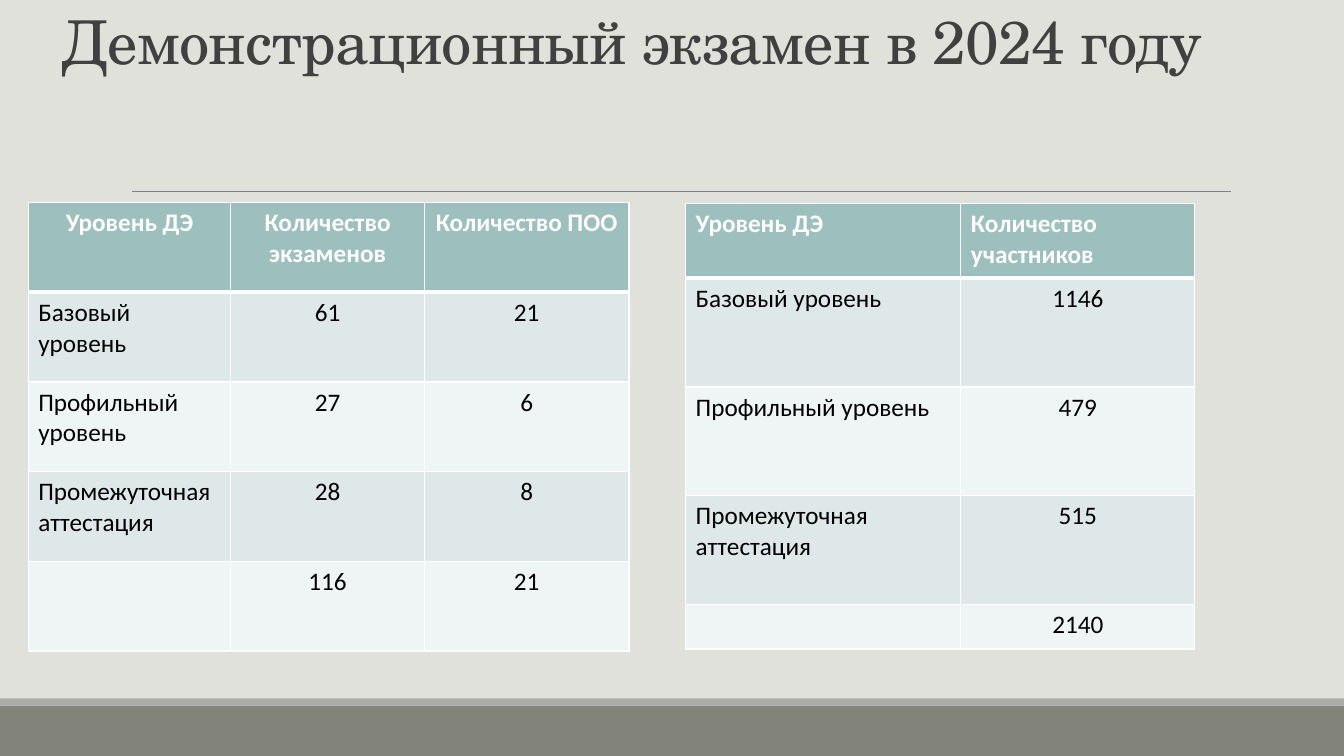
"""Builds the slide on the 2024 demonstration exam with its two result tables."""
from dataclasses import dataclass

from lxml import etree
from pptx import Presentation
from pptx.dml.color import RGBColor
from pptx.enum import shapes, text
from pptx.oxml import ns
from pptx.util import Inches, Pt

HEADER_FILL, BAND_FILLS = "9DBFBE", ("DFE8E8", "EFF4F4")
LEFT, CENTER = text.PP_ALIGN.LEFT, text.PP_ALIGN.CENTER


@dataclass
class Band:
    top: float
    height: float
    color: str


@dataclass
class ResultTable:
    left: float
    top: float
    widths: list[float]
    heights: list[float]
    header_align: text.PP_ALIGN
    rows: list[list[str]]


BANDS = [Band(7, 0.5, "82847C"), Band(6.93, 0.07, "ACADA8")]
TABLES = [
    ResultTable(0.28, 2.01, [2.01, 1.92, 2.03], [0.89] * 5, CENTER, [
        ["Уровень ДЭ", "Количество экзаменов", "Количество ПОО"],
        ["Базовый уровень", "61", "21"],
        ["Профильный уровень", "27", "6"],
        ["Промежуточная аттестация", "28", "8"],
        ["", "116", "21"],
    ]),
    ResultTable(6.8, 2.02, [2.73, 2.32], [0.74, 1.08, 1.08, 1.08, 0.44], LEFT, [
        ["Уровень ДЭ", "Количество участников"],
        ["Базовый уровень", "1146"],
        ["Профильный уровень", "479"],
        ["Промежуточная аттестация", "515"],
        ["", "2140"],
    ]),
]


def rgb(color: str) -> RGBColor:
    return RGBColor.from_string(color)


def write_text(tf, content: str, *, size: float = 18, font: str = "Calibri",
               color: str = "000000", bold: bool = False, align=LEFT,
               line_spacing: float | None = None, tracking: float = 0) -> None:
    p = tf.paragraphs[0]
    p.alignment = align
    p.line_spacing = line_spacing
    r = p.add_run()
    r.text = content
    r.font.size, r.font.name, r.font.bold = Pt(size), font, bold
    r.font.color.rgb = rgb(color)
    if tracking:
        r._r.get_or_add_rPr().set("spc", str(round(tracking * 100)))


def add_title(s, content: str) -> None:
    sp = s.shapes.title
    sp.left, sp.top, sp.width, sp.height = map(Inches, (0.34, 0.17, 11.86, 0.64))
    tf = sp.text_frame
    tf.word_wrap = True
    tf.auto_size = text.MSO_AUTO_SIZE.NONE
    tf.vertical_anchor = text.MSO_ANCHOR.BOTTOM
    write_text(tf, content, size=43.2, font="TeX Gyre Schola", color="404040",
               align=CENTER, line_spacing=0.85, tracking=-0.5)


def add_band(s, band: Band, width: int) -> None:
    sp = s.shapes.add_shape(shapes.MSO_SHAPE.RECTANGLE, 0, Inches(band.top),
                            width, Inches(band.height))
    sp.shadow.inherit = False
    sp.fill.solid()
    sp.fill.fore_color.rgb = rgb(band.color)
    sp.line.fill.background()


def add_rule(s) -> None:
    line = s.shapes.add_connector(shapes.MSO_CONNECTOR.STRAIGHT, Inches(1.31),
                                  Inches(1.9), Inches(12.21), Inches(1.9))
    line.line.color.rgb = rgb("808080")
    line.line.width = Pt(0.5)
    etree.SubElement(line._element.spPr, ns.qn("a:effectLst"))


def set_borders(cell, top: float = 1, bottom: float = 1) -> None:
    tc_pr = cell._tc.get_or_add_tcPr()
    for side, width in {"L": 1, "R": 1, "T": top, "B": bottom}.items():
        ln = etree.SubElement(tc_pr, ns.qn(f"a:ln{side}"), w=str(Pt(width)))
        fill = etree.SubElement(ln, ns.qn("a:solidFill"))
        etree.SubElement(fill, ns.qn("a:srgbClr"), val="FFFFFF")


def add_result_table(s, spec_table: ResultTable) -> None:
    t = spec_table
    table = s.shapes.add_table(
        len(t.heights), len(t.widths), Inches(t.left), Inches(t.top),
        Inches(sum(t.widths)), Inches(sum(t.heights))).table
    for column, width in zip(table.columns, t.widths):
        column.width = Inches(width)
    for i, (row, height) in enumerate(zip(table.rows, t.heights)):
        row.height = Inches(height)
        header = i == 0
        for j, cell in enumerate(row.cells):
            set_borders(cell, top=3 if i == 1 else 1, bottom=3 if header else 1)
            cell.fill.solid()
            cell.fill.fore_color.rgb = rgb(HEADER_FILL if header else BAND_FILLS[(i - 1) % 2])
            if t.rows[i][j]:
                body_align = CENTER if j else LEFT
                write_text(cell.text_frame, t.rows[i][j], bold=header,
                           color="FFFFFF" if header else "000000",
                           align=t.header_align if header else body_align)


def main() -> None:
    prs = Presentation()
    prs.slide_width, prs.slide_height = Inches(13.33), Inches(7.5)
    s = prs.slides.add_slide(prs.slide_layouts[5])
    s.background.fill.solid()
    s.background.fill.fore_color.rgb = rgb("E1E1DB")
    for band in BANDS:
        add_band(s, band, prs.slide_width)
    add_rule(s)
    add_title(s, "Демонстрационный экзамен в 2024 году")
    for result_table in TABLES:
        add_result_table(s, result_table)
    prs.save("out.pptx")


if __name__ == "__main__":
    main()
